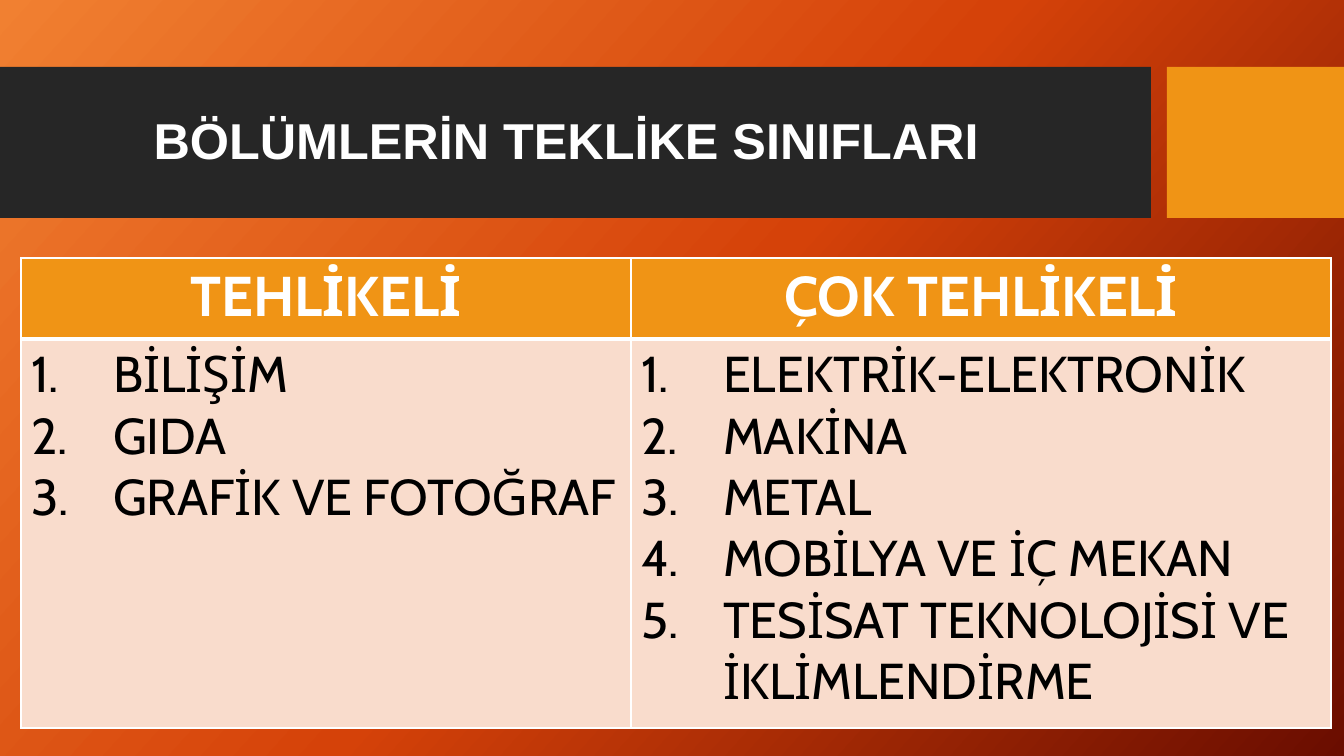
from lxml.etree import SubElement
from pptx import Presentation
from pptx.dml.color import RGBColor
from pptx.enum.shapes import MSO_SHAPE
from pptx.enum.text import MSO_ANCHOR, PP_ALIGN
from pptx.oxml.ns import qn
from pptx.util import Pt

WHITE, ORANGE, DARK, PINK, BLACK = "FFFFFF", "F09415", "262626", "F9DCCC", "000000"
LEFT, CENTER = PP_ALIGN.LEFT, PP_ALIGN.CENTER
HEADS = ["TEHLİKELİ", "ÇOK TEHLİKELİ"]
LISTS = [
    ["BİLİŞİM", "GIDA", "GRAFİK VE FOTOĞRAF"],
    ["ELEKTRİK-ELEKTRONİK", "MAKİNA", "METAL", "MOBİLYA VE İÇ MEKAN",
     "TESİSAT TEKNOLOJİSİ VE İKLİMLENDİRME"],
]


def px(num):
    return round(num * 914400 / 100.8)


def color(code):
    return RGBColor.from_string(code)


class Deck:
    """Holds the style and the current slide, and draws each kind of element."""

    def __init__(self, wide, high):
        self.file = Presentation()
        self.file.slide_width, self.file.slide_height = px(wide), px(high)
        self.slide = self.file.slides.add_slide(self.file.slide_layouts[6])
        self.font = "Cabin"

    def back(self, stops, angle):
        fill = self.slide.background.fill
        fill.gradient()
        fill.gradient_angle = 360 - angle
        group = self.slide.element.find(".//" + qn("a:gsLst"))
        for old in list(group):
            group.remove(old)
        for place, code in stops:
            stop = SubElement(group, qn("a:gs"), pos=str(place * 1000))
            SubElement(stop, qn("a:srgbClr"), val=code)

    def rect(self, x, y, w, h, code):
        shape = self.slide.shapes.add_shape(MSO_SHAPE.RECTANGLE, px(x), px(y), px(w), px(h))
        shape.shadow.inherit = False
        shape.fill.solid()
        shape.fill.fore_color.rgb = color(code)
        shape.line.fill.background()

    def text(self, para, words, size, code, bold, align, font=None):
        para.alignment = align
        run = para.add_run()
        run.text = words
        run.font.name = font or self.font
        run.font.size, run.font.bold = Pt(size), bold
        run.font.color.rgb = color(code)

    def title(self, x, y, w, h, words):
        frame = self.slide.shapes.add_textbox(px(x), px(y), px(w), px(h)).text_frame
        frame.word_wrap = True
        frame.vertical_anchor = MSO_ANCHOR.MIDDLE
        para = frame.paragraphs[0]
        para.line_spacing = 0.9
        self.text(para, words, 36, WHITE, True, CENTER, "Arial")

    def number(self, para, indent):
        props = para._p.get_or_add_pPr()
        props.set("marL", str(px(indent)))
        props.set("indent", str(-px(indent)))
        SubElement(props, qn("a:buFont"), typeface="+mj-lt")
        SubElement(props, qn("a:buAutoNum"), type="arabicPeriod")

    def cell(self, cell, code, top, base):
        props = cell._tc.get_or_add_tcPr()
        for side, width in zip("LRTB", (1, 1, top, base)):
            line = SubElement(props, qn("a:ln" + side), w=str(Pt(width)))
            SubElement(SubElement(line, qn("a:solidFill")), qn("a:srgbClr"), val=WHITE)
        cell.fill.solid()
        cell.fill.fore_color.rgb = color(code)

    def table(self, x, y, cols, rows, heads, lists):
        table = self.slide.shapes.add_table(
            len(rows), len(cols), px(x), px(y), px(sum(cols)), px(sum(rows))).table
        table.horz_banding = False
        for row, high in zip(table.rows, rows):
            row.height = px(high)
        for col, (wide, head, items) in enumerate(zip(cols, heads, lists)):
            table.columns[col].width = px(wide)
            top, body = table.cell(0, col), table.cell(1, col)
            self.cell(top, ORANGE, 1, 3)
            self.text(top.text_frame.paragraphs[0], head, 40, WHITE, True, CENTER)
            self.cell(body, PINK, 3, 1)
            frame = body.text_frame
            for index, item in enumerate(items):
                para = frame.add_paragraph() if index else frame.paragraphs[0]
                self.number(para, 82)
                self.text(para, item, 36, BLACK, False, LEFT)


def main():
    deck = Deck(1344, 756)
    deck.back([(0, "F18031"), (50, "D54209"), (100, "6A0D00")], 42)
    deck.rect(0, 67, 1151, 151, DARK)
    deck.rect(1167, 67, 177, 151, ORANGE)
    deck.title(37, 84, 1059, 119, "BÖLÜMLERİN TEKLİKE SINIFLARI")
    deck.table(21, 258, [610, 700], [81, 389], HEADS, LISTS)
    deck.file.save("out.pptx")


if __name__ == "__main__":
    main()
